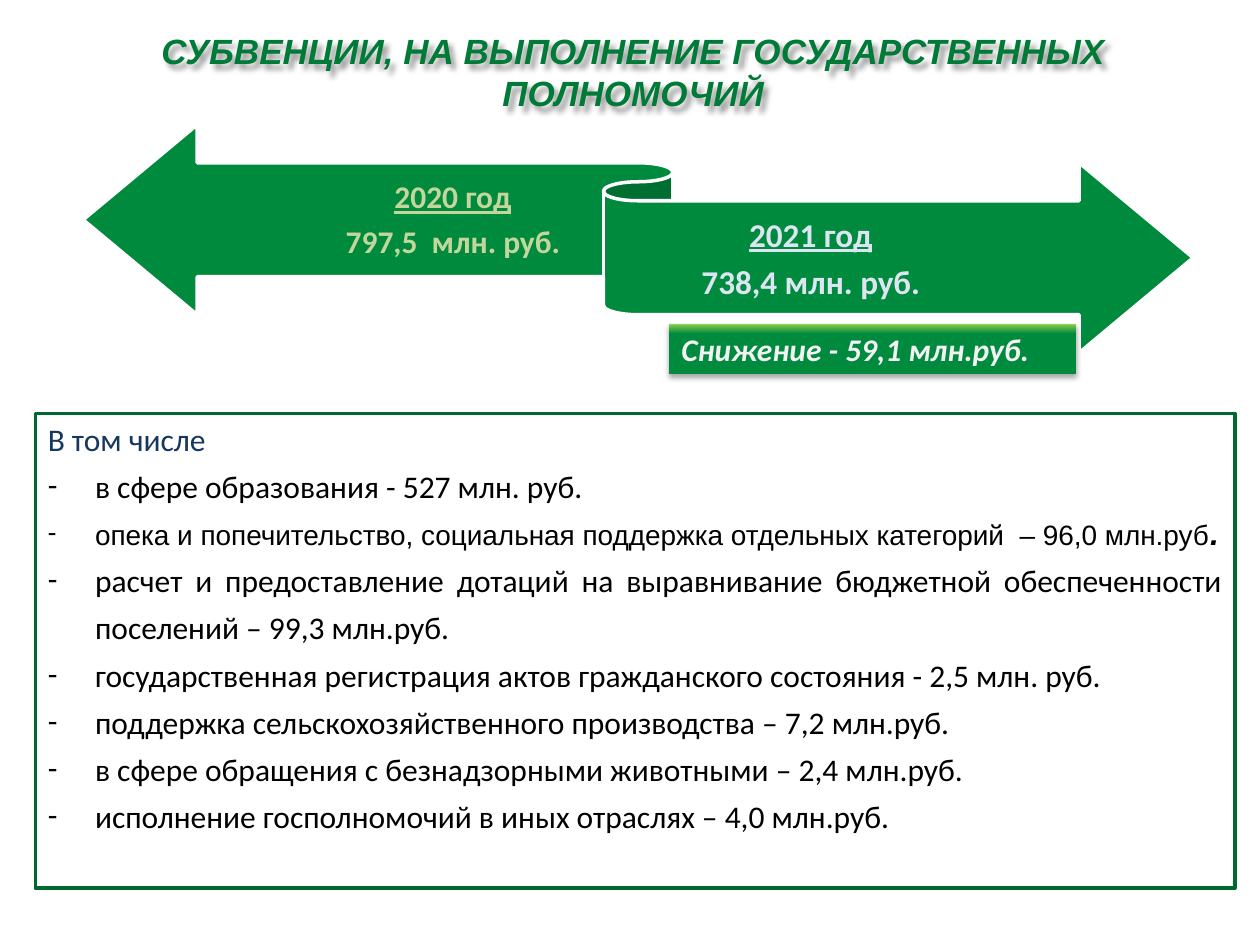
"""Build the slide on subventions for delegated state powers."""
from dataclasses import dataclass
from typing import Any, NamedTuple

from lxml import etree
from pptx import Presentation
from pptx.dml.color import RGBColor
from pptx.enum.shapes import MSO_SHAPE
from pptx.enum.text import MSO_ANCHOR, PP_ALIGN
from pptx.oxml.ns import qn
from pptx.util import Pt

RIBBON, RECTANGLE = MSO_SHAPE.LEFT_RIGHT_RIBBON, MSO_SHAPE.RECTANGLE
TOP, MIDDLE = MSO_ANCHOR.TOP, MSO_ANCHOR.MIDDLE
LEFT, CENTER, JUSTIFY = PP_ALIGN.LEFT, PP_ALIGN.CENTER, PP_ALIGN.JUSTIFY


@dataclass(frozen=True)
class Theme:
    """Colours, fonts and type sizes of the slide."""
    green: str = "008A3E"
    lime: str = "92D050"
    title: str = "007A37"
    border: str = "00682F"
    white: str = "FFFFFF"
    black: str = "000000"
    earlier: str = "C3D69B"
    later: str = "DCE6F2"
    change: str = "F2F2F2"
    lead: str = "17375E"
    body_font: str = "Calibri"
    heading_font: str = "Arial"
    title_size: float = 20
    later_size: float = 19
    body_size: float = 18
    small_size: float = 16


THEME = Theme()


class Frame(NamedTuple):
    """Position and size in points."""
    left: float
    top: float
    width: float
    height: float

    def lengths(self) -> list[Pt]:
        """Return the four lengths."""
        return [Pt(value) for value in self]


class Piece(NamedTuple):
    """A run of text with its font."""
    text: str
    color: str = THEME.black
    size: float = THEME.body_size
    font: str = THEME.body_font
    style: dict[str, bool] = {}


class YearTotal(NamedTuple):
    """The total of one year on the ribbon."""
    frame: Frame
    year: str
    amount: str
    color: str
    size: float


TOTALS = [
    YearTotal(Frame(144, 94.3, 229.7, 64.1), "2020 год", "797,5  млн. руб.",
              THEME.earlier, THEME.body_size),
    YearTotal(Frame(399.6, 116.6, 127.4, 64.1), "2021 год", "738,4 млн. руб.",
              THEME.later, THEME.later_size),
]
ITEMS = [
    [Piece("в сфере образования - 527 млн. руб.")],
    [Piece("опека и попечительство, социальная поддержка отдельных категорий  – 96,0 млн.руб",
           size=THEME.small_size, font=THEME.heading_font),
     Piece(".", font=THEME.heading_font, style={"bold": True, "italic": True})],
    [Piece("расчет и предоставление дотаций на выравнивание бюджетной "
           "обеспеченности поселений – 99,3 млн.руб.")],
    [Piece("государственная регистрация актов гражданского состояния - 2,5 млн. руб.")],
    [Piece("поддержка сельскохозяйственного производства – 7,2 млн.руб.")],
    [Piece("в сфере обращения с безнадзорными животными – 2,4 млн.руб.")],
    [Piece("исполнение госполномочий в иных отраслях – 4,0 млн.руб.")],
]


def apply(target: Any, values: dict[str, Any]) -> None:
    """Set attributes of an object from a dict."""
    for name, value in values.items():
        setattr(target, name, value)


def write(para: Any, pieces: list[Piece], **layout: Any) -> None:
    """Format a paragraph and fill it with runs."""
    apply(para, layout)
    for piece in pieces:
        span = para.add_run()
        span.text = piece.text
        apply(span.font, {"size": Pt(piece.size), "name": piece.font, **piece.style})
        span.font.color.rgb = RGBColor.from_string(piece.color)


def hang(para: Any, bullet: str = "") -> None:
    """Give a paragraph a hanging indent and, if named, a bullet."""
    properties = para._p.get_or_add_pPr()
    properties.set("marL", str(Pt(27)))
    properties.set("indent", str(Pt(-27)))
    if bullet:
        etree.SubElement(properties, qn("a:buFont"), typeface=THEME.body_font)
        etree.SubElement(properties, qn("a:buChar"), char=bullet)


def cast_shadow(shape: Any, blur: float, distance: float, angle: int, opacity: int) -> None:
    """Give a shape a soft black outer shadow."""
    shape.shadow.inherit = False
    effects = shape._element.spPr.find(qn("a:effectLst"))
    shadow = etree.SubElement(effects, qn("a:outerShdw"), blurRad=str(Pt(blur)),
                              dist=str(Pt(distance)), dir=str(angle * 60000),
                              algn="ctr", rotWithShape="0")
    color = etree.SubElement(shadow, qn("a:srgbClr"), val=THEME.black)
    etree.SubElement(color, qn("a:alpha"), val=str(opacity * 1000))


def add_figure(slide: Any, kind: Any, frame: Frame, fill: str, line: str) -> Any:
    """Add a filled and outlined shape."""
    shape = slide.shapes.add_shape(kind, *frame.lengths())
    shape.shadow.inherit = False
    shape.fill.solid()
    shape.fill.fore_color.rgb = RGBColor.from_string(fill)
    shape.line.color.rgb = RGBColor.from_string(line)
    shape.line.width = Pt(2)
    return shape


def add_title(slide: Any) -> None:
    """Place and format the slide title."""
    title = slide.shapes.title
    frame = Frame(14.4, 9.4, 694.8, 63.4)
    apply(title, dict(zip(frame._fields, frame.lengths())))
    title.text_frame.vertical_anchor = MIDDLE
    write(title.text_frame.paragraphs[0],
          [Piece("СУБВЕНЦИИ, НА ВЫПОЛНЕНИЕ ГОСУДАРСТВЕННЫХ ПОЛНОМОЧИЙ", THEME.title,
                 THEME.title_size, THEME.heading_font, {"bold": True, "italic": True})],
          alignment=CENTER)
    cast_shadow(title, 3, 3, 45, 40)


def add_total(slide: Any, total: YearTotal) -> None:
    """Add the year and its amount."""
    text = slide.shapes.add_textbox(*total.frame.lengths()).text_frame
    apply(text, {"word_wrap": True, "vertical_anchor": MIDDLE, "margin_left": 0,
                 "margin_right": 0, "margin_top": Pt(5), "margin_bottom": Pt(5)})
    for para, line, underlined in ((text.paragraphs[0], total.year, True),
                                   (text.add_paragraph(), total.amount, False)):
        style = {"bold": True, "underline": underlined}
        write(para, [Piece(line, total.color, total.size, style=style)],
              alignment=CENTER, line_spacing=0.9, space_after=Pt(0.35 * total.size))


def add_change(slide: Any) -> None:
    """Add the label with the decrease between the years."""
    label = slide.shapes.add_shape(RECTANGLE, *Frame(382.3, 185, 232.6, 28.8).lengths())
    label.line.fill.background()
    label.fill.gradient()
    label.fill.gradient_angle = 90
    for stop, position, color in zip(label.fill.gradient_stops, (0.8, 1),
                                     (THEME.green, THEME.lime)):
        stop.position = position
        stop.color.rgb = RGBColor.from_string(color)
    cast_shadow(label, 3.1, 1.8, 90, 35)
    write(label.text_frame.paragraphs[0],
          [Piece("Снижение - 59,1 млн.руб.", THEME.change,
                 style={"bold": True, "italic": True})], alignment=LEFT)


def add_breakdown(slide: Any) -> None:
    """Add the framed list of amounts by purpose."""
    box = add_figure(slide, RECTANGLE, Frame(20.2, 236.2, 685.4, 271.4),
                     THEME.white, THEME.border)
    text = box.text_frame
    apply(text, {"word_wrap": True, "vertical_anchor": TOP})
    hang(text.paragraphs[0])
    write(text.paragraphs[0], [Piece("В том числе", THEME.lead)], alignment=JUSTIFY)
    for item in ITEMS:
        para = text.add_paragraph()
        hang(para, "-")
        write(para, item, alignment=JUSTIFY, line_spacing=1.25)


def main() -> None:
    """Build and save the deck."""
    deck = Presentation()
    apply(deck, {"slide_width": Pt(720), "slide_height": Pt(540)})
    page = deck.slides.add_slide(deck.slide_layouts[5])
    add_title(page)
    add_figure(page, RIBBON, Frame(47.5, 71.3, 634.3, 130.3), THEME.green, THEME.white)
    for total in TOTALS:
        add_total(page, total)
    add_change(page)
    add_breakdown(page)
    deck.save("out.pptx")


if __name__ == "__main__":
    main()
